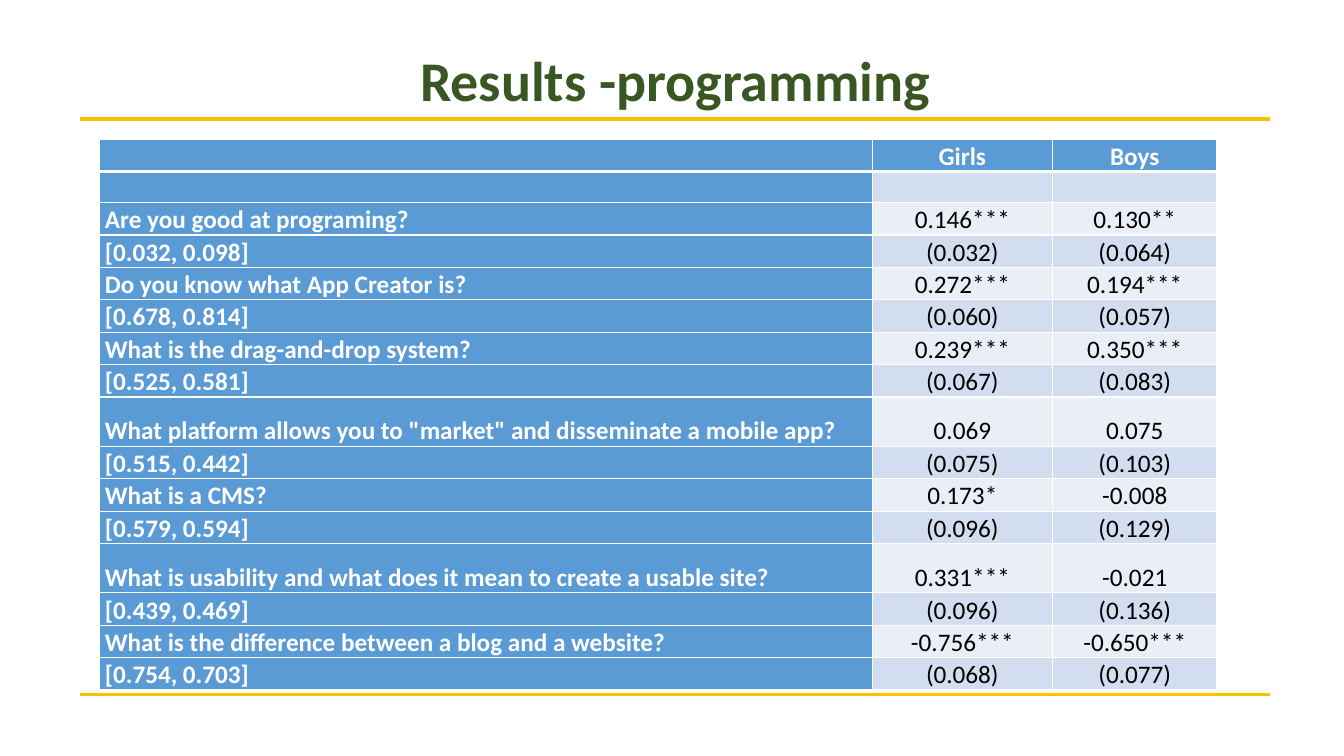
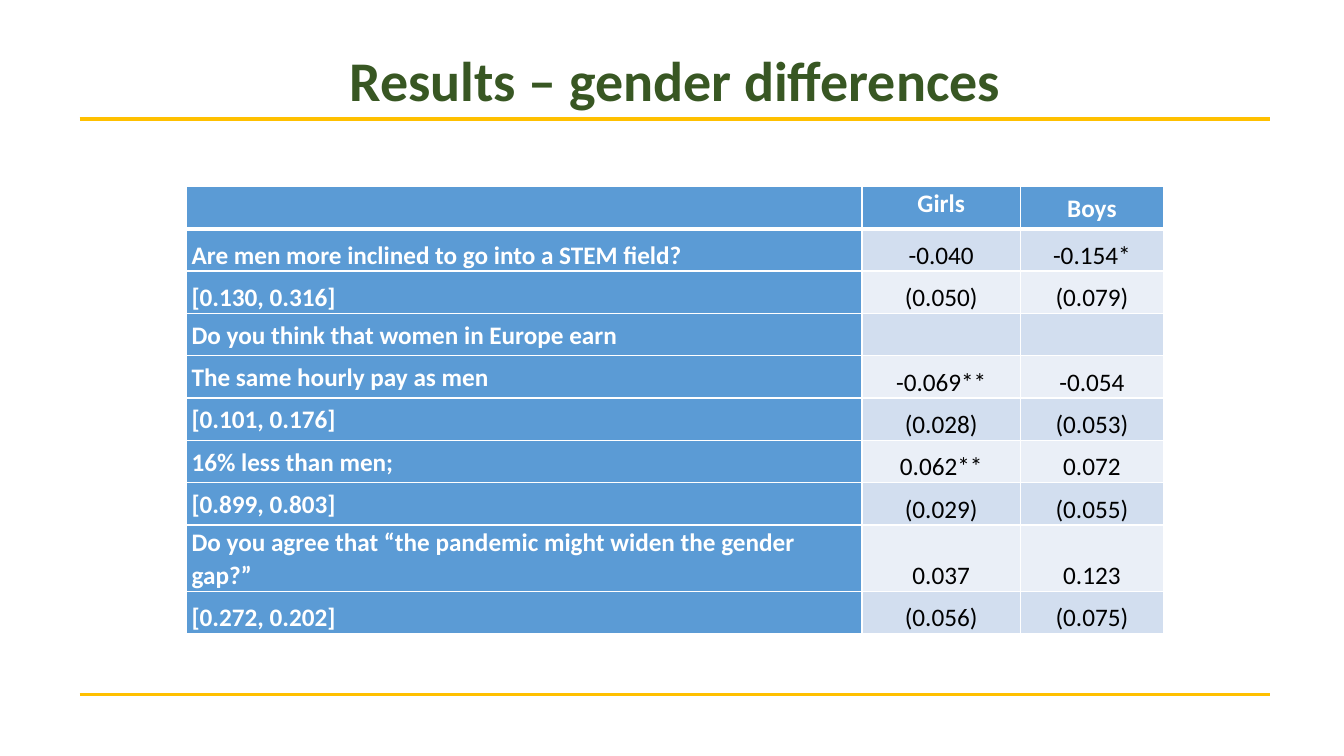
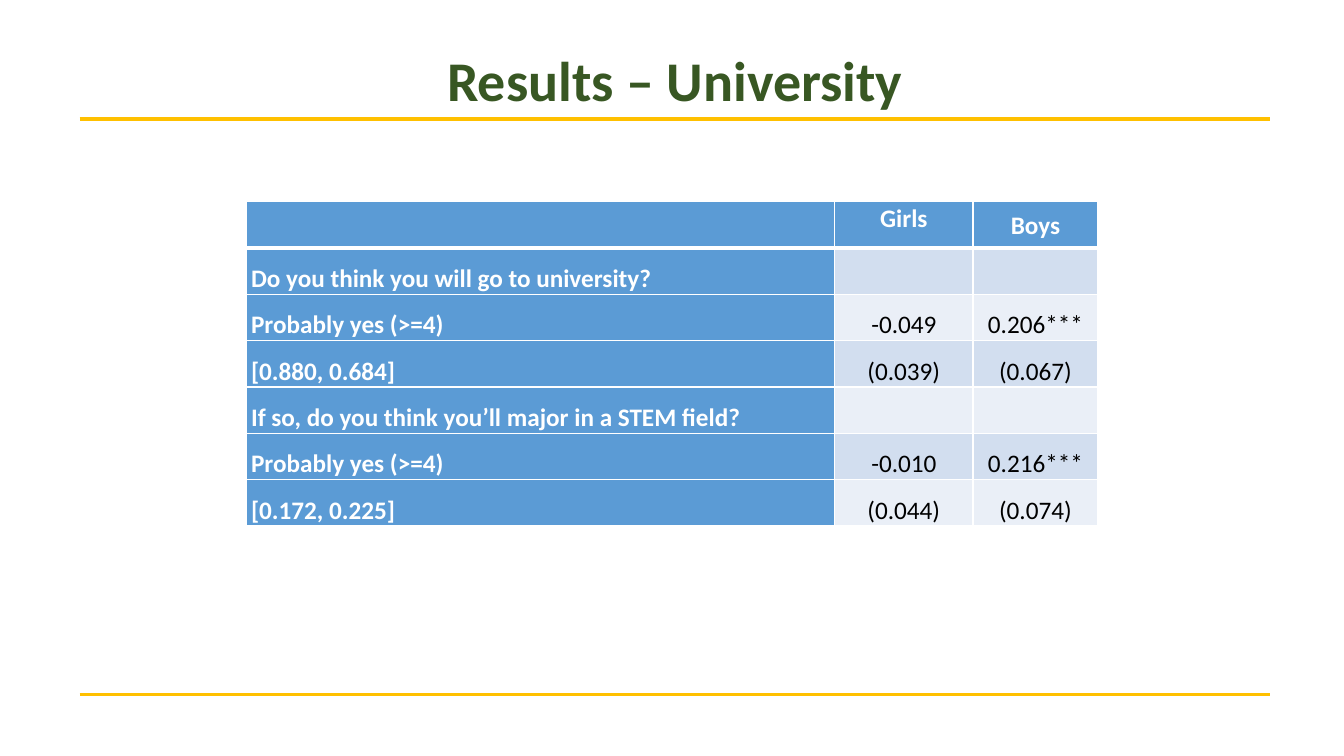
"""Build three results slides, each with a regression table of girls and boys."""
from lxml.etree import SubElement
from pptx import Presentation
from pptx.dml.color import RGBColor
from pptx.enum.shapes import MSO_CONNECTOR
from pptx.enum.text import MSO_ANCHOR, PP_ALIGN
from pptx.oxml.ns import qn
from pptx.util import Inches, Pt

FONT = "Calibri"
TITLE_GREEN = "385723"
RULE_GOLD = "FFC000"
HEADER_BLUE = "5B9BD5"
BAND_COLORS = ("EAEFF7", "D2DEEF")
WHITE = "FFFFFF"
BLACK = "000000"
LEFT, RIGHT = 0.79, 12.6
RULE_POSITIONS = (1.18, 6.89)
HEADER = ("", "Girls", "Boys")

PROGRAMMING_ROWS = [
    HEADER,
    ("", "", ""),
    ("Are you good at programing?", "0.146***", "0.130**"),
    ("[0.032, 0.098]", "(0.032)", "(0.064)"),
    ("Do you know what App Creator is?", "0.272***", "0.194***"),
    ("[0.678, 0.814]", "(0.060)", "(0.057)"),
    ("What is the drag-and-drop system?", "0.239***", "0.350***"),
    ("[0.525, 0.581]", "(0.067)", "(0.083)"),
    ('What platform allows you to "market" and disseminate a mobile app?', "0.069", "0.075"),
    ("[0.515, 0.442]", "(0.075)", "(0.103)"),
    ("What is a CMS?", "0.173*", "-0.008"),
    ("[0.579, 0.594]", "(0.096)", "(0.129)"),
    ("What is usability and what does it mean to create a usable site?", "0.331***", "-0.021"),
    ("[0.439, 0.469]", "(0.096)", "(0.136)"),
    ("What is the difference between a blog and a website?", "-0.756***", "-0.650***"),
    ("[0.754, 0.703]", "(0.068)", "(0.077)"),
]

GENDER_ROWS = [
    HEADER,
    ("Are men more inclined to go into a STEM field?", "-0.040", "-0.154*"),
    ("[0.130, 0.316]", "(0.050)", "(0.079)"),
    ("Do you think that women in Europe earn", "", ""),
    ("The same hourly pay as men", "-0.069**", "-0.054"),
    ("[0.101, 0.176]", "(0.028)", "(0.053)"),
    ("16% less than men;", "0.062**", "0.072"),
    ("[0.899, 0.803]", "(0.029)", "(0.055)"),
    ("Do you agree that “the pandemic might widen the gender gap?”", "0.037", "0.123"),
    ("[0.272, 0.202]", "(0.056)", "(0.075)"),
]

UNIVERSITY_ROWS = [
    HEADER,
    ("Do you think you will go to university?", "", ""),
    ("Probably yes (>=4)", "-0.049", "0.206***"),
    ("[0.880, 0.684]", "(0.039)", "(0.067)"),
    ("If so, do you think you’ll major in a STEM field?", "", ""),
    ("Probably yes (>=4)", "-0.010", "0.216***"),
    ("[0.172, 0.225]", "(0.044)", "(0.074)"),
]


def color(value):
    """Turn a hex string into a colour."""
    return RGBColor.from_string(value)


def format_paragraph(paragraph, size, text_color, bold, alignment, spacing):
    """Format a paragraph and its runs."""
    paragraph.alignment = alignment
    paragraph.line_spacing = spacing
    for run in paragraph.runs:
        run.font.name = FONT
        run.font.size = Pt(size)
        run.font.bold = bold
        run.font.color.rgb = color(text_color)


def add_title(slide, text):
    """Add the title resting on the upper rule."""
    shape = slide.shapes.add_textbox(
        Inches(LEFT), Inches(0), Inches(RIGHT - LEFT), Inches(RULE_POSITIONS[0]))
    text_frame = shape.text_frame
    text_frame.word_wrap = True
    text_frame.vertical_anchor = MSO_ANCHOR.BOTTOM
    text_frame.text = text
    format_paragraph(text_frame.paragraphs[0], 40, TITLE_GREEN, True, PP_ALIGN.CENTER, 0.9)


def add_rule(slide, top):
    """Add a horizontal gold rule."""
    connector = slide.shapes.add_connector(
        MSO_CONNECTOR.STRAIGHT, Inches(LEFT), Inches(top), Inches(RIGHT), Inches(top))
    connector.line.color.rgb = color(RULE_GOLD)
    connector.line.width = Pt(2.25)
    SubElement(connector._element.spPr, qn("a:effectLst"))


def set_borders(cell, row_index):
    """Draw white cell borders, thicker below the header."""
    properties = cell._tc.get_or_add_tcPr()
    thick_side = {0: "lnB", 1: "lnT"}.get(row_index)
    for side in ("lnL", "lnR", "lnT", "lnB"):
        width = Pt(3 if side == thick_side else 1)
        line = SubElement(properties, qn(f"a:{side}"), w=str(width))
        fill = SubElement(line, qn("a:solidFill"))
        SubElement(fill, qn("a:srgbClr"), val=WHITE)


def cell_anchor(row_index, column_index, middle_rows):
    """Choose the vertical anchor of a cell."""
    if row_index == 0:
        return MSO_ANCHOR.MIDDLE if column_index == 2 else MSO_ANCHOR.TOP
    if column_index == 0 and row_index in middle_rows:
        return MSO_ANCHOR.MIDDLE
    return MSO_ANCHOR.BOTTOM


def fill_cell(cell, text, row_index, column_index, middle_rows):
    """Write and format one table cell."""
    is_heading = row_index == 0 or column_index == 0
    cell.margin_left = cell.margin_right = Inches(0.05)
    cell.margin_top = cell.margin_bottom = 0
    cell.vertical_anchor = cell_anchor(row_index, column_index, middle_rows)
    set_borders(cell, row_index)
    cell.fill.solid()
    cell.fill.fore_color.rgb = color(HEADER_BLUE if is_heading else BAND_COLORS[row_index % 2])
    if text:
        cell.text_frame.text = text
        alignment = PP_ALIGN.LEFT if column_index == 0 else PP_ALIGN.CENTER
        format_paragraph(cell.text_frame.paragraphs[0], 18, WHITE if is_heading else BLACK,
                         is_heading, alignment, 1.07)


def add_results_table(slide, rows, left, top, widths, row_height, tall_rows=None, middle_rows=()):
    """Add a results table with a header row and a label column."""
    heights = [(tall_rows or {}).get(index, row_height) for index in range(len(rows))]
    table = slide.shapes.add_table(
        len(rows), len(widths), Inches(left), Inches(top),
        Inches(sum(widths)), Inches(sum(heights))).table
    for column, width in zip(table.columns, widths):
        column.width = Inches(width)
    for row_index, texts in enumerate(rows):
        table.rows[row_index].height = Inches(heights[row_index])
        for column_index, text in enumerate(texts):
            fill_cell(table.cell(row_index, column_index), text,
                      row_index, column_index, middle_rows)


def add_results_slide(presentation, title, rows, **layout):
    """Add a slide with title, rules and results table."""
    slide = presentation.slides.add_slide(presentation.slide_layouts[6])
    add_title(slide, title)
    for top in RULE_POSITIONS:
        add_rule(slide, top)
    add_results_table(slide, rows, **layout)


def main():
    """Build and save the presentation."""
    presentation = Presentation()
    presentation.slide_width = Inches(13.33)
    presentation.slide_height = Inches(7.5)
    add_results_slide(presentation, "Results -programming", PROGRAMMING_ROWS,
                      left=0.99, top=1.38, widths=(7.66, 1.79, 1.63),
                      row_height=0.31, tall_rows={8: 0.49, 12: 0.49})
    add_results_slide(presentation, "Results – gender differences", GENDER_ROWS,
                      left=1.85, top=1.85, widths=(6.7, 1.57, 1.42),
                      row_height=0.42, tall_rows={8: 0.66}, middle_rows=range(3, 9))
    add_results_slide(presentation, "Results – University", UNIVERSITY_ROWS,
                      left=2.44, top=2, widths=(5.84, 1.37, 1.24), row_height=0.46)
    presentation.save("out.pptx")


if __name__ == "__main__":
    main()
